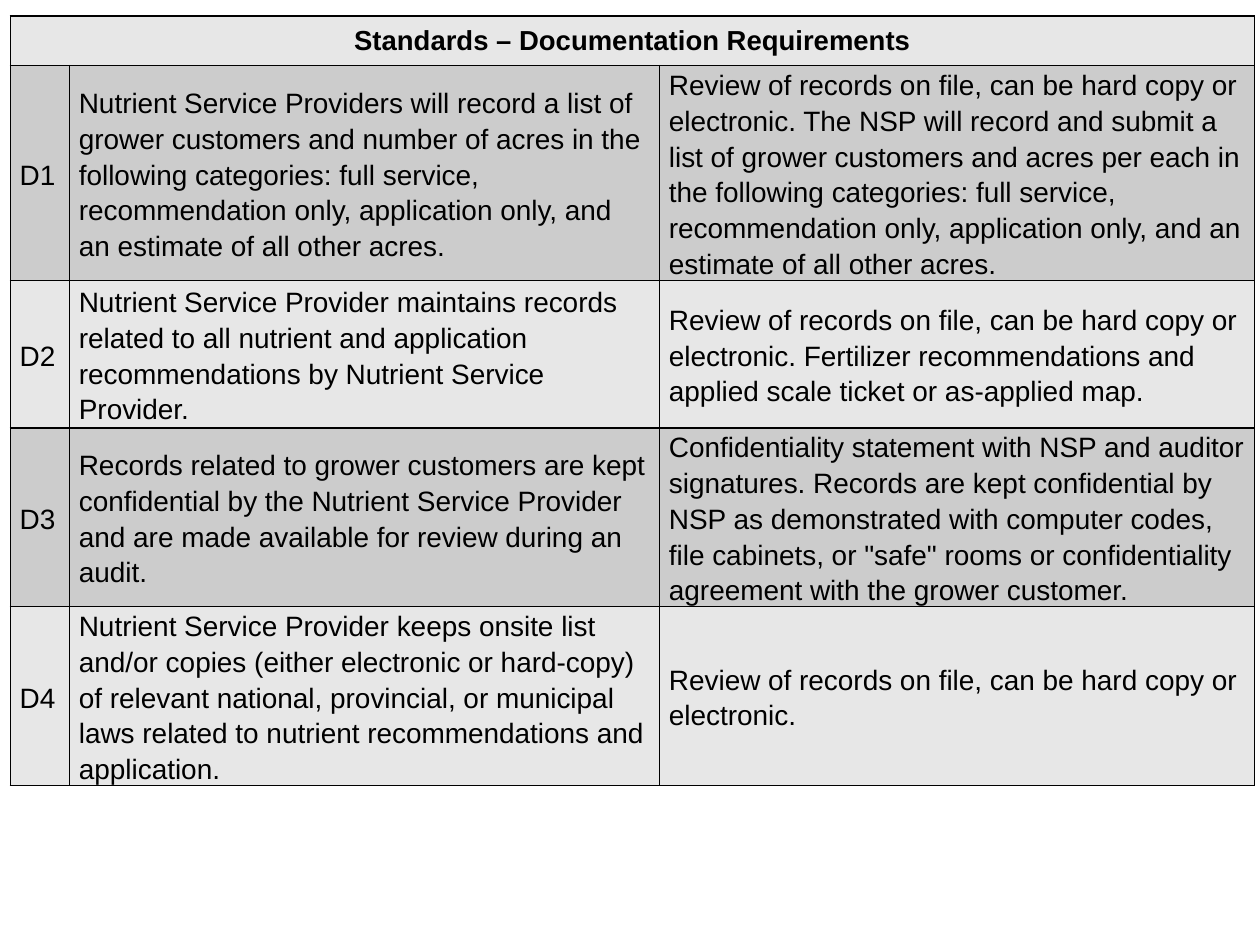
from dataclasses import dataclass

from lxml import etree
from pptx import Presentation
from pptx.dml.color import RGBColor
from pptx.enum import text
from pptx.oxml import ns
from pptx.util import Pt


@dataclass(frozen=True)
class Theme:
    font: str = "Arial"
    ink: str = "000000"
    light: str = "E7E7E7"
    dark: str = "CCCCCC"
    heading_size: float = 15.7
    body_size: float = 16
    border_width: float = 1


THEME = Theme()
HEADING = "Standards – Documentation Requirements"
STANDARDS = [
    ("D1",
     "Nutrient Service Providers will record a list of grower customers and number of "
     "acres in the following categories: full service, recommendation only, application "
     "only, and an estimate of all other acres.",
     "Review of records on file, can be hard copy or electronic. The NSP will record and "
     "submit a list of grower customers and acres per each in the following categories: "
     "full service, recommendation only, application only, and an estimate of all other "
     "acres."),
    ("D2",
     "Nutrient Service Provider maintains records related to all nutrient and application "
     "recommendations by Nutrient Service Provider.",
     "Review of records on file, can be hard copy or electronic. Fertilizer "
     "recommendations and applied scale ticket or as-applied map."),
    ("D3",
     "Records related to grower customers are kept confidential by the Nutrient Service "
     "Provider and are made available for review during an audit.",
     "Confidentiality statement with NSP and auditor signatures. Records are kept "
     "confidential by NSP as demonstrated with computer codes, file cabinets, or \"safe\" "
     "rooms or confidentiality agreement with the grower customer."),
    ("D4",
     "Nutrient Service Provider keeps onsite list and/or copies (either electronic or "
     "hard-copy) of relevant national, provincial, or municipal laws related to nutrient "
     "recommendations and application.",
     "Review of records on file, can be hard copy or electronic."),
]
COLUMN_WIDTHS = [33.8, 337.2, 340]
ROW_HEIGHTS = [28.4, 122.8, 84.2, 102.2, 102.2]


def set_borders(cell):
    properties = cell._tc.get_or_add_tcPr()
    for position, side in enumerate(("a:lnL", "a:lnR", "a:lnT", "a:lnB")):
        line = etree.Element(ns.qn(side), w=str(int(Pt(THEME.border_width))))
        fill = etree.SubElement(line, ns.qn("a:solidFill"))
        etree.SubElement(fill, ns.qn("a:srgbClr"), val=THEME.ink)
        properties.insert(position, line)


def style_cell(cell, color, horizontal, vertical):
    cell.fill.solid()
    cell.fill.fore_color.rgb = RGBColor.from_string(color)
    cell.margin_left = cell.margin_right = Pt(horizontal)
    cell.margin_top = cell.margin_bottom = Pt(vertical)
    set_borders(cell)


def add_text(cell, words, size, bold=False):
    paragraph = cell.text_frame.paragraphs[0]
    run = paragraph.add_run()
    run.text = words
    run.font.name = THEME.font
    run.font.size = Pt(size)
    run.font.bold = bold
    run.font.color.rgb = RGBColor.from_string(THEME.ink)
    return paragraph


def add_heading_row(table):
    for cell in table.rows[0].cells:
        style_cell(cell, THEME.light, 10.8, 5.4)
    heading = table.cell(0, 0)
    heading.merge(table.cell(0, len(COLUMN_WIDTHS) - 1))
    paragraph = add_text(heading, HEADING, THEME.heading_size, bold=True)
    paragraph.alignment = text.PP_ALIGN.CENTER


def add_standard_row(row, standard, color):
    for cell, words in zip(row.cells, standard):
        style_cell(cell, color, 5.4, 0)
        cell.vertical_anchor = text.MSO_ANCHOR.MIDDLE
        paragraph = add_text(cell, words, THEME.body_size)
        paragraph.line_spacing = 1.15


def add_standards_table(slide, left, top):
    frame = slide.shapes.add_table(
        len(ROW_HEIGHTS), len(COLUMN_WIDTHS), Pt(left), Pt(top),
        Pt(sum(COLUMN_WIDTHS)), Pt(sum(ROW_HEIGHTS)))
    table = frame.table
    table.horz_banding = False
    for column, width in zip(table.columns, COLUMN_WIDTHS):
        column.width = Pt(width)
    for row, height in zip(table.rows, ROW_HEIGHTS):
        row.height = Pt(height)
    add_heading_row(table)
    for index, standard in enumerate(STANDARDS, start=1):
        color = THEME.dark if index % 2 else THEME.light
        add_standard_row(table.rows[index], standard, color)


def main():
    presentation = Presentation()
    presentation.slide_width = Pt(720)
    presentation.slide_height = Pt(540)
    slide = presentation.slides.add_slide(presentation.slide_layouts[6])
    add_standards_table(slide, 5.9, 9)
    presentation.save("out.pptx")


if __name__ == "__main__":
    main()
